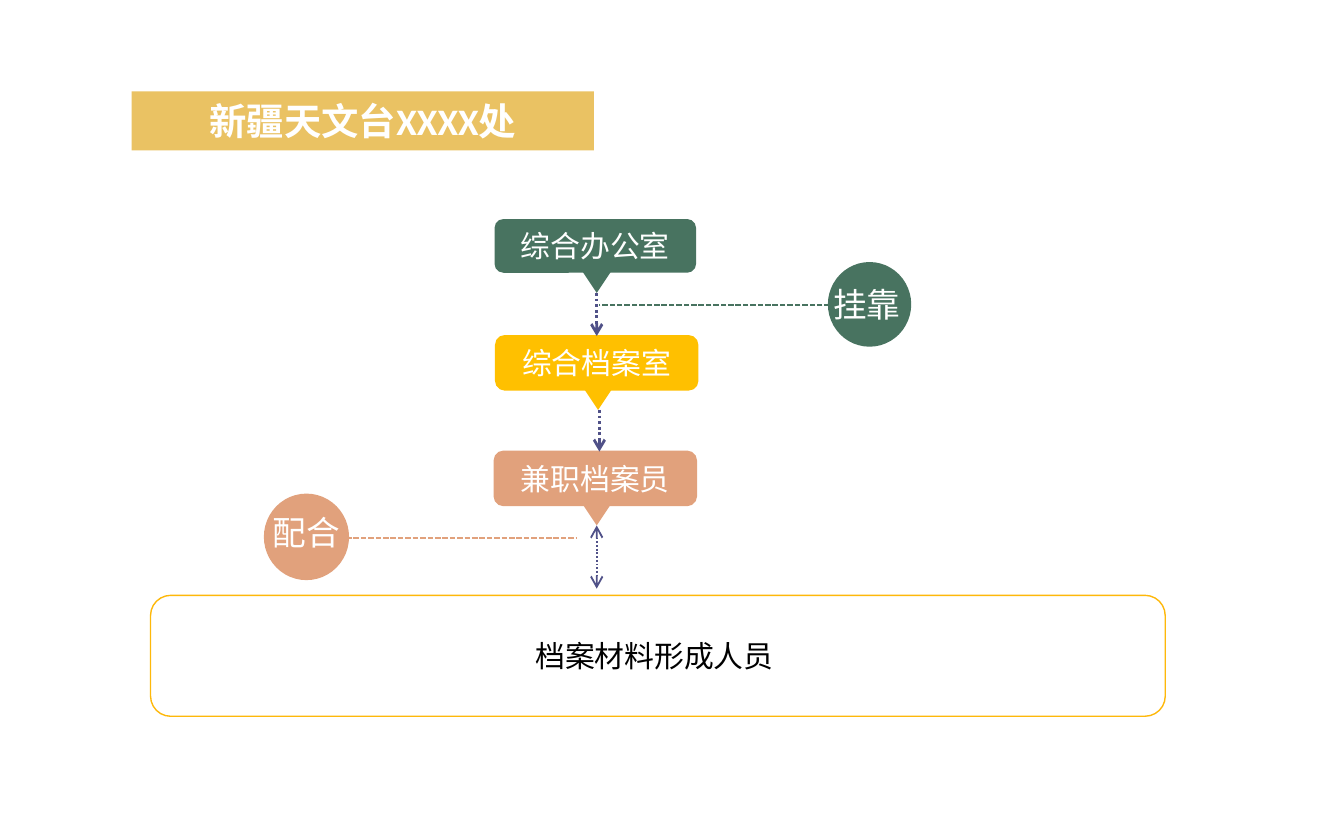
from pptx import Presentation
from pptx.dml.color import RGBColor
from pptx.enum import dml, shapes, text
from pptx.oxml import ns
from pptx.util import Inches, Pt
from lxml import etree

WHITE = RGBColor(0xFF, 0xFF, 0xFF)
BLACK = RGBColor(0, 0, 0)
SAND = RGBColor(0xEA, 0xC2, 0x63)
AMBER = RGBColor(0xFE, 0xB8, 0x0A)
GREEN = RGBColor(0x48, 0x73, 0x60)
GOLD = RGBColor(0xFF, 0xC0, 0x00)
CORAL = RGBColor(0xE1, 0xA1, 0x7C)
BLUE = RGBColor(0x50, 0x51, 0x88)
LATIN, HAN = "Calibri", "Noto Sans CJK SC"
KIND = shapes.MSO_SHAPE
DASH, DOT = dml.MSO_LINE.SQUARE_DOT, dml.MSO_LINE.ROUND_DOT

TITLE = "新疆天文台XXXX处"
BASE = "档案材料形成人员 "
STEPS = [
    ("综合办公室", 3.68, 1.63, GREEN, None),
    ("综合档案室", 3.69, 2.5, GOLD, GOLD),
    ("兼职档案员", 3.68, 3.36, CORAL, CORAL),
]
STEP_W, STEP_H = 1.5, 0.4
TIP_W, TIP_H, TIP_DX, TIP_DY = 0.32, 0.24, 0.6, 0.31
NOTES = [
    ("挂靠", 6.16, 1.95, 6.1, 2.06, GREEN, None, (6.23, 2.27, 4.46, 2.27)),
    ("配合", 1.97, 3.68, 1.93, 3.76, CORAL, CORAL, (2.52, 4, 4.29, 4)),
]
ARROWS = [
    ((4.44, 2.18, 4.44, 2.5), 1.5, ["tailEnd"]),
    ((4.46, 3.05, 4.46, 3.36), 1.5, ["tailEnd"]),
    ((4.44, 3.91, 4.44, 4.38), 1, ["headEnd", "tailEnd"]),
]

deck = Presentation()
deck.slide_width, deck.slide_height = Inches(10), Inches(6.25)
slide = deck.slides.add_slide(deck.slide_layouts[6])


def shape(kind, box, fill, edge=None, width=1):
    item = slide.shapes.add_shape(kind, *map(Inches, box))
    item.shadow.inherit = False
    item.fill.solid()
    item.fill.fore_color.rgb = fill
    if edge is None:
        item.line.fill.background()
    else:
        item.line.color.rgb = edge
        item.line.width = Pt(width)
    return item


def write(item, words, size, color=WHITE, font=LATIN, bold=False,
          align=text.PP_ALIGN.CENTER, anchor=text.MSO_ANCHOR.MIDDLE, wrap=True):
    frame = item.text_frame
    frame.word_wrap = wrap
    frame.vertical_anchor = anchor
    para = frame.paragraphs[0]
    para.alignment = align
    run = para.add_run()
    run.text = words
    run.font.size = Pt(size)
    run.font.name = font
    run.font.bold = bold
    run.font.color.rgb = color
    east = etree.SubElement(run.font._element, ns.qn("a:ea"))
    east.set("typeface", HAN)


def line(ends, color, width, dash, heads=()):
    item = slide.shapes.add_connector(
        shapes.MSO_CONNECTOR.STRAIGHT, *map(Inches, ends))
    item.line.color.rgb = color
    item.line.width = Pt(width)
    item.line.dash_style = dash
    for head in heads:
        tip = etree.SubElement(item.line._get_or_add_ln(), ns.qn("a:" + head))
        tip.set("type", "arrow")
    etree.SubElement(item._element.spPr, ns.qn("a:effectLst"))


title = shape(KIND.RECTANGLE, (0.98, 0.68, 3.44, 0.44), SAND)
write(title, TITLE, 20, bold=True, anchor=text.MSO_ANCHOR.TOP)

base = shape(KIND.ROUNDED_RECTANGLE, (1.12, 4.43, 7.55, 0.9), WHITE, AMBER, 0.75)
write(base, BASE, 16, BLACK)

for words, left, top, fill, edge in STEPS:
    step = shape(KIND.ROUNDED_RECTANGLE, (left, top, STEP_W, STEP_H), fill, edge)
    write(step, words, 16)
    tip = shape(KIND.ISOSCELES_TRIANGLE,
                (left + TIP_DX, top + TIP_DY, TIP_W, TIP_H), fill)
    tip.rotation = 180

for words, left, top, x, y, fill, edge, ends in NOTES:
    shape(KIND.OVAL, (left, top, 0.62, 0.63), fill, edge)
    line(ends, fill, 1, DASH)
    label = slide.shapes.add_textbox(*map(Inches, (x, y, 0.71, 0.4)))
    write(label, words, 18, font=HAN, align=text.PP_ALIGN.LEFT,
          anchor=text.MSO_ANCHOR.TOP, wrap=False)

for ends, width, heads in ARROWS:
    line(ends, BLUE, width, DOT, heads)

deck.save("out.pptx")
